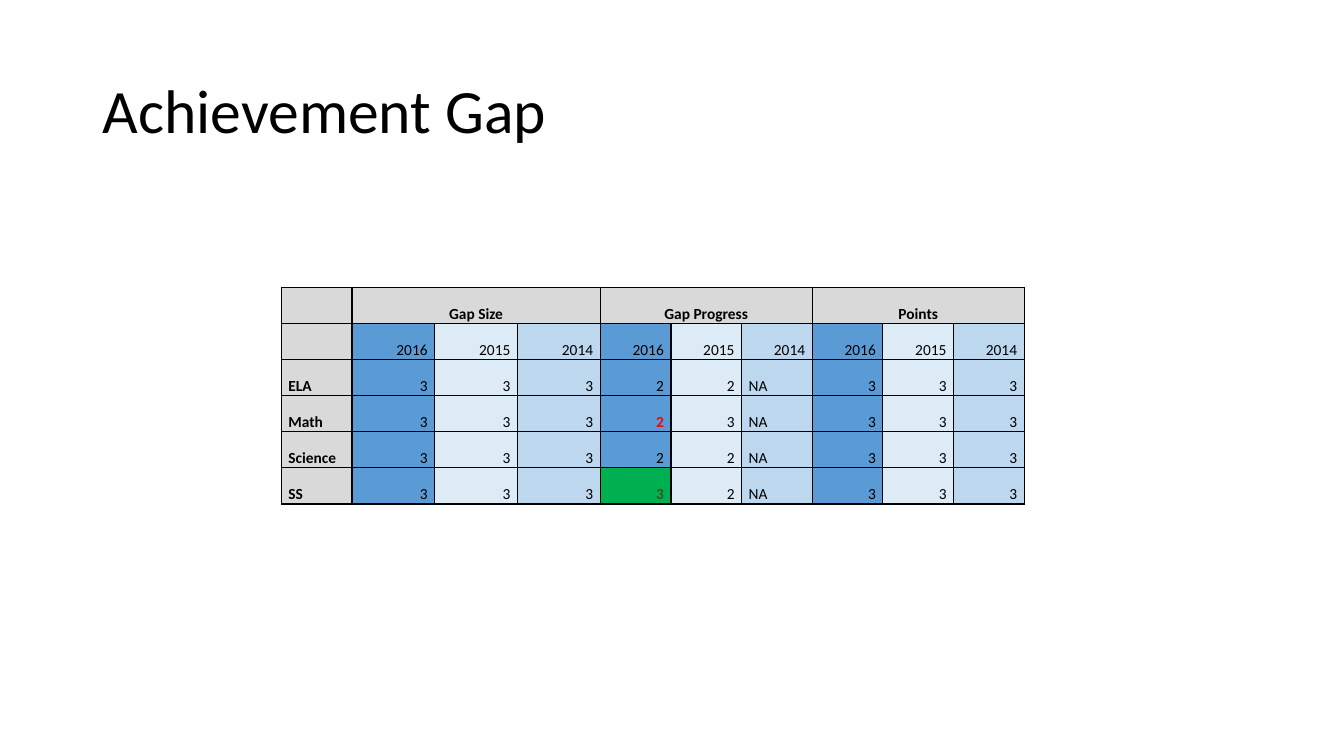
import pptx
import pptx.dml.color
import pptx.enum.text
import pptx.oxml
import pptx.oxml.ns
import pptx.util

RGBColor = pptx.dml.color.RGBColor
Inches, Pt = pptx.util.Inches, pptx.util.Pt
ALIGN, ANCHOR = pptx.enum.text.PP_ALIGN, pptx.enum.text.MSO_ANCHOR

BLACK = RGBColor(0x00, 0x00, 0x00)
GREY = RGBColor(0xD9, 0xD9, 0xD9)
RED = RGBColor(0xFF, 0x00, 0x00)
GREEN = RGBColor(0x00, 0xB0, 0x50)
DARK_GREEN = RGBColor(0x37, 0x56, 0x23)
YEAR_FILLS = [RGBColor(0x5B, 0x9B, 0xD5), RGBColor(0xDD, 0xEB, 0xF7),
              RGBColor(0xBD, 0xD7, 0xEE)]

FONT = "Calibri"
GROUPS = ["Gap Size", "Gap Progress", "Points"]
YEARS = ["2016", "2015", "2014"]
SCORES = {
    "ELA": "3 3 3 2 2 NA 3 3 3",
    "Math": "3 3 3 2 3 NA 3 3 3",
    "Science": "3 3 3 2 2 NA 3 3 3",
    "SS": "3 3 3 3 2 NA 3 3 3",
}
# (row, column): (text colour, fill)
HIGHLIGHTS = {(3, 4): (RED, YEAR_FILLS[0]), (5, 4): (DARK_GREEN, GREEN)}
COLUMN_SHARES = [0.7] + [0.82] * 3 + [0.7] * 6


def add_title(slide, text, left, top, width, height):
    sp = slide.shapes.title
    sp.left, sp.top, sp.width, sp.height = map(Inches, (left, top, width, height))
    tf = sp.text_frame
    tf.text = text
    tf.word_wrap = True
    tf.vertical_anchor = ANCHOR.MIDDLE
    p = tf.paragraphs[0]
    p.alignment = ALIGN.LEFT
    p.line_spacing = 0.9
    p.font.name, p.font.size, p.font.color.rgb = FONT, Pt(44), BLACK


def add_borders(cell):
    tc_pr = cell._tc.get_or_add_tcPr()
    for i, side in enumerate("LRTB"):
        tc_pr.insert(i, pptx.oxml.parse_xml(
            f'<a:ln{side} {pptx.oxml.ns.nsdecls("a")} w="{Pt(1)}"><a:solidFill>'
            f'<a:srgbClr val="{BLACK}"/></a:solidFill></a:ln{side}>'))


def format_cell(cell, text, fill, color, bold, align):
    cell.fill.solid()
    cell.fill.fore_color.rgb = fill
    cell.vertical_anchor = ANCHOR.BOTTOM
    cell.margin_left = cell.margin_right = Inches(0.07)
    cell.margin_top = cell.margin_bottom = 0
    cell.text = text
    p = cell.text_frame.paragraphs[0]
    p.alignment = align
    p.line_spacing = 1.07
    p.font.name, p.font.size = FONT, Pt(11)
    p.font.bold, p.font.color.rgb = bold, color
    add_borders(cell)


def add_score_table(slide, left, top, width, height):
    # Group headings, years, then one row per subject
    rows = [[""] + [text for group in GROUPS for text in (group, "", "")],
            [""] + YEARS * len(GROUPS)]
    rows += [[subject] + scores.split() for subject, scores in SCORES.items()]

    frame = slide.shapes.add_table(len(rows), len(COLUMN_SHARES),
                                   *map(Inches, (left, top, width, height)))
    table = frame.table
    for column, share in zip(table.columns, COLUMN_SHARES):
        column.width = Inches(width * share / sum(COLUMN_SHARES))

    for r, row in enumerate(rows):
        for c, text in enumerate(row):
            heading = r == 0 or c == 0
            fill = GREY if heading else YEAR_FILLS[(c - 1) % len(YEARS)]
            color, fill = HIGHLIGHTS.get((r, c), (BLACK, fill))
            if r == 0:
                align = ALIGN.CENTER
            elif c == 0 or text == "NA":
                align = ALIGN.LEFT
            else:
                align = ALIGN.RIGHT
            format_cell(table.cell(r, c), text, fill, color,
                        heading or (r, c) in HIGHLIGHTS, align)

    # Each group heading spans its years
    for c in range(1, len(COLUMN_SHARES), len(YEARS)):
        table.cell(0, c).merge(table.cell(0, c + len(YEARS) - 1))


def main():
    prs = pptx.Presentation()
    prs.slide_width, prs.slide_height = Inches(13.33), Inches(7.5)
    slide = prs.slides.add_slide(prs.slide_layouts.get_by_name("Title Only"))
    add_title(slide, "Achievement Gap", 0.92, 0.4, 11.5, 1.45)
    add_score_table(slide, 2.79, 2.85, 7.37, 2.15)
    prs.save("out.pptx")


if __name__ == "__main__":
    main()
